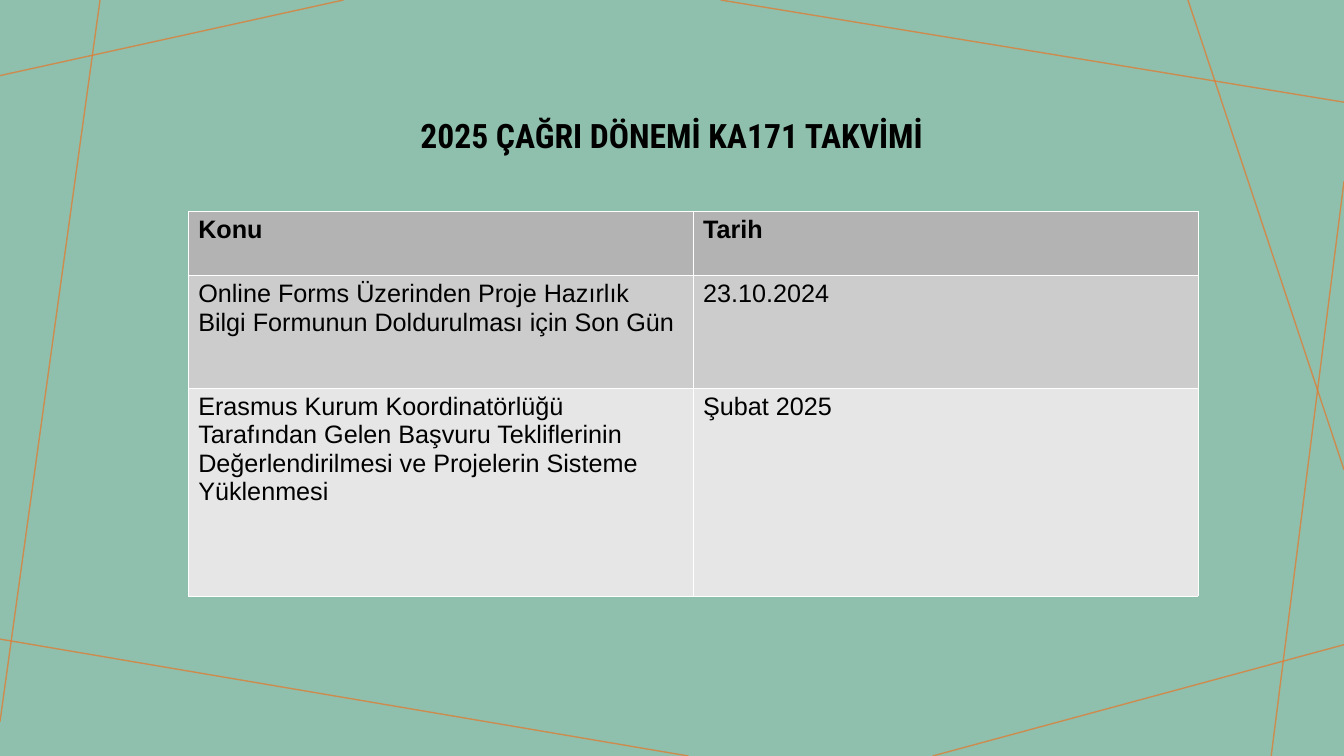
from pptx import Presentation
from pptx.dml.color import RGBColor
from pptx.enum import shapes, text
from pptx.oxml import parse_xml
from pptx.oxml.ns import nsdecls, qn
from pptx.util import Pt

COLORS = {
    "background": "8FC0AD",
    "line": "E77629",
    "text": "000000",
    "border": "FFFFFF",
    "rows": ["B3B3B3", "CCCCCC", "E6E6E6"],
}
LINE_ALPHA = 70000
BORDER_WIDTH = Pt(0.06)
ROW_HEIGHTS = [46, 80.5, 148.5]
CALENDAR = [
    ("Konu", "Tarih"),
    ("Online Forms Üzerinden Proje Hazırlık Bilgi Formunun Doldurulması için Son Gün",
     "23.10.2024"),
    ("Erasmus Kurum Koordinatörlüğü Tarafından Gelen Başvuru Tekliflerinin "
     "Değerlendirilmesi ve Projelerin Sisteme Yüklenmesi", "Şubat 2025"),
]


def rgb(name):
    return RGBColor.from_string(name)


def format_text(p, font, size, bold):
    for r in p.runs:
        r.font.name = font
        r.font.size = Pt(size)
        r.font.bold = bold
        r.font.color.rgb = rgb(COLORS["text"])


def add_background(s, left, top, width, height):
    s.background.fill.solid()
    s.background.fill.fore_color.rgb = rgb(COLORS["background"])
    right, bottom = left + width, top + height
    lines = [
        (left + 245.5, top, left, top + 54),
        (left + 71.5, top, left, top + 515.5),
        (left + 492, bottom, left, top + 456.5),
        (right, top + 460.5, left + 666.5, bottom),
        (right, top + 129.5, left + 908.5, bottom),
        (right, top + 335.5, left + 849, top),
        (right, top + 73, left + 515, top),
    ]
    for ends in lines:
        line = s.shapes.add_connector(
            shapes.MSO_CONNECTOR.STRAIGHT, *(Pt(end) for end in ends))
        line.line.width = Pt(1)
        line.line.color.rgb = rgb(COLORS["line"])
        sp_pr = line._element.spPr
        color = sp_pr.find(".//" + qn("a:srgbClr"))
        color.append(parse_xml(f'<a:alpha {nsdecls("a")} val="{LINE_ALPHA}"/>'))
        sp_pr.append(parse_xml(f'<a:effectLst {nsdecls("a")}/>'))


def add_title(s, left, top, width, height):
    sp = s.shapes.title
    sp.left, sp.top, sp.width, sp.height = Pt(left), Pt(top), Pt(width), Pt(height)
    tf = sp.text_frame
    tf.text = "2025 ÇAĞRI DÖNEMİ KA171 TAKVİMİ"
    tf.margin_left = tf.margin_right = tf.margin_top = tf.margin_bottom = 0
    tf.vertical_anchor = text.MSO_ANCHOR.MIDDLE
    tf.word_wrap = True
    p = tf.paragraphs[0]
    p.alignment = text.PP_ALIGN.CENTER
    format_text(p, "Roboto Condensed", 24, True)


def add_borders(cell):
    tc_pr = cell._tc.get_or_add_tcPr()
    for side in "LRTB":
        tc_pr.append(parse_xml(
            f'<a:ln{side} {nsdecls("a")} w="{BORDER_WIDTH}"><a:solidFill>'
            f'<a:srgbClr val="{COLORS["border"]}"/></a:solidFill></a:ln{side}>'))


def add_calendar(s, left, top, width):
    table = s.shapes.add_table(
        len(CALENDAR), len(CALENDAR[0]),
        Pt(left), Pt(top), Pt(width), Pt(sum(ROW_HEIGHTS))).table
    for i, (entries, height) in enumerate(zip(CALENDAR, ROW_HEIGHTS)):
        table.rows[i].height = Pt(height)
        for j, entry in enumerate(entries):
            cell = table.cell(i, j)
            add_borders(cell)
            cell.fill.solid()
            cell.fill.fore_color.rgb = rgb(COLORS["rows"][i])
            cell.text_frame.text = entry
            format_text(cell.text_frame.paragraphs[0], "Arial", 18, i == 0)


def main():
    prs = Presentation()
    prs.slide_width, prs.slide_height = Pt(960.5), Pt(540)
    s = prs.slides.add_slide(prs.slide_layouts[5])
    add_background(s, 0, 0, 960.5, 540)
    add_title(s, 90, 42, 780, 108.5)
    add_calendar(s, 134.5, 150.5, 721.5)
    prs.save("out.pptx")


if __name__ == "__main__":
    main()
